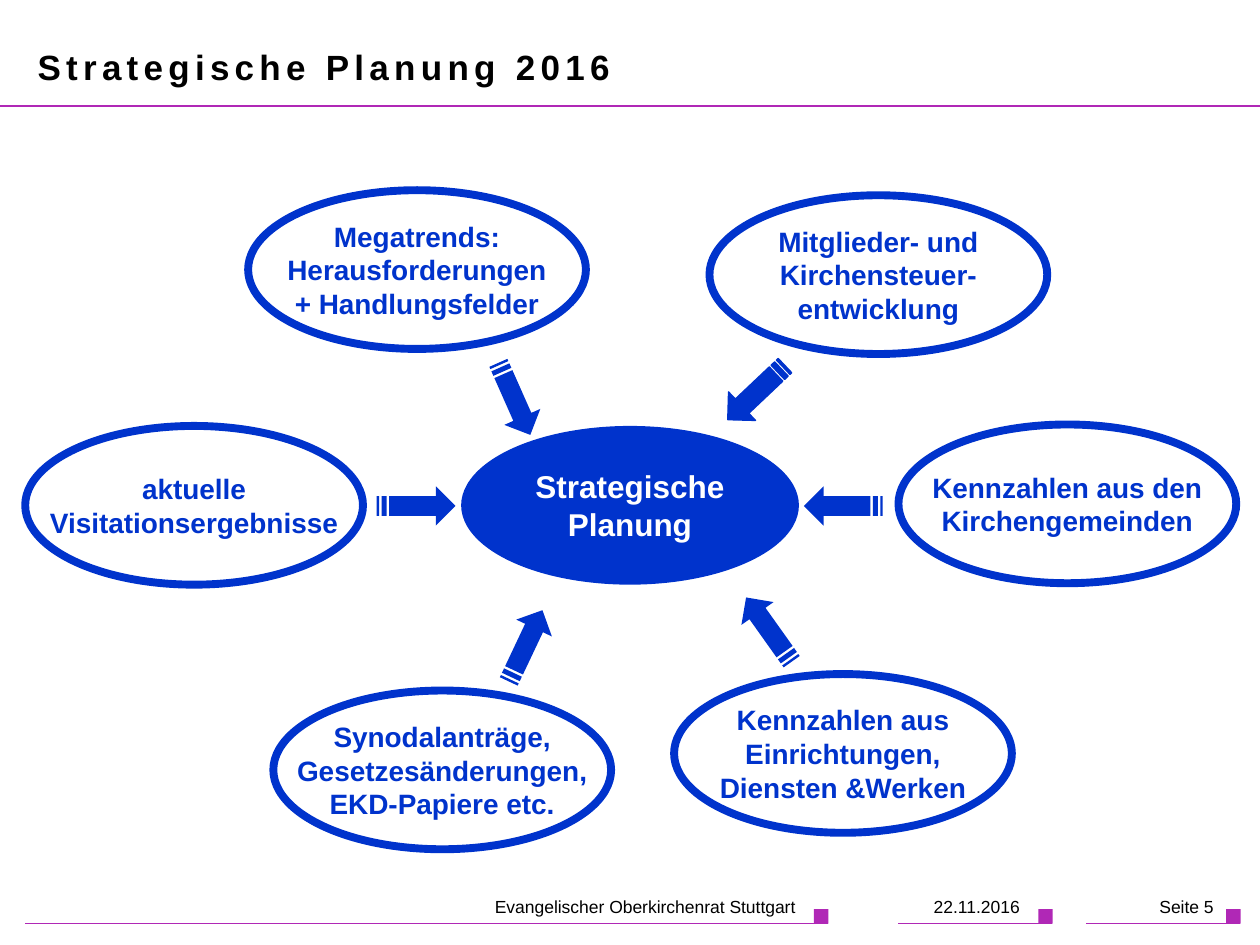
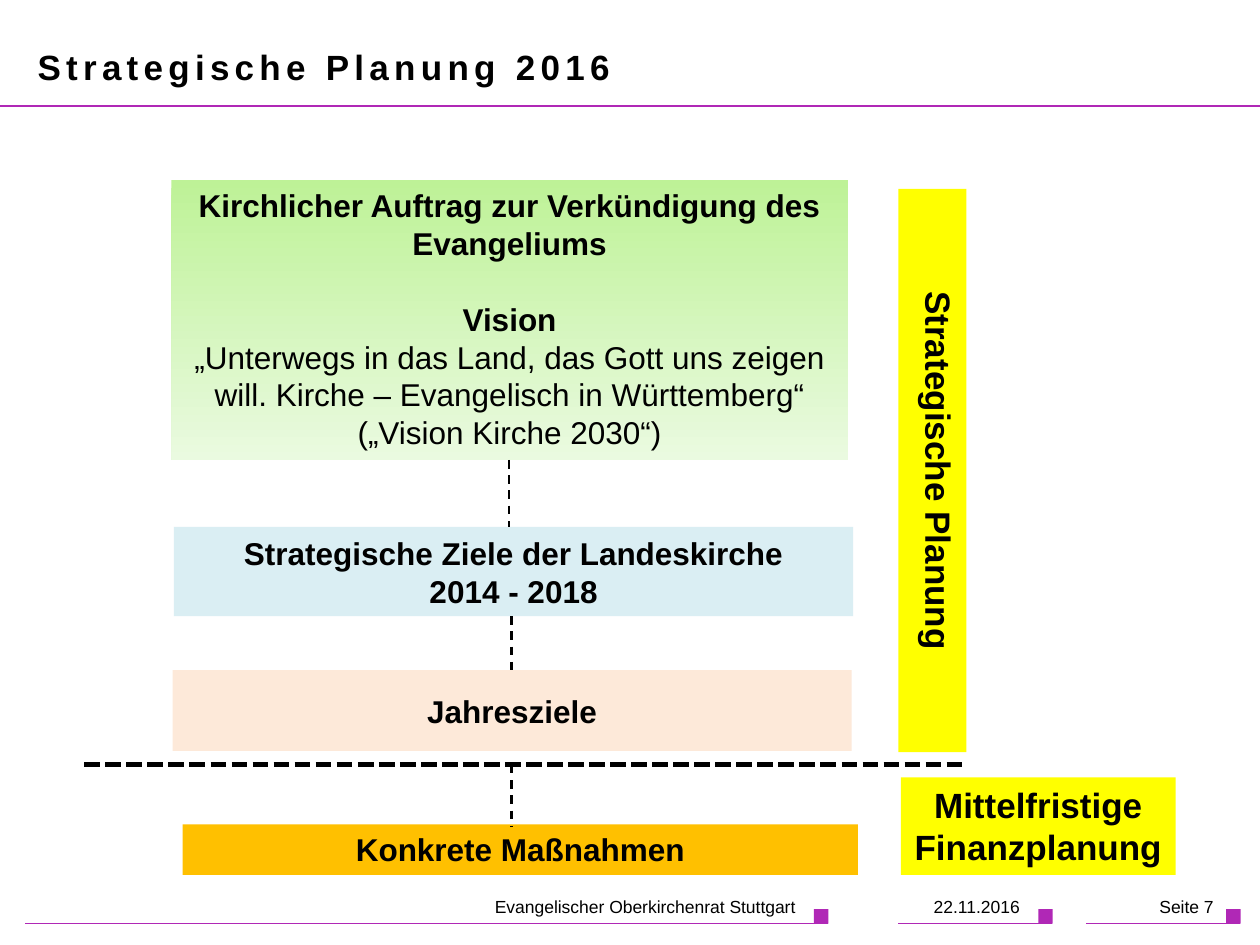
from dataclasses import dataclass

from lxml import etree
from pptx import Presentation
from pptx.dml.color import RGBColor
from pptx.enum.dml import MSO_LINE
from pptx.enum.shapes import MSO_CONNECTOR, MSO_SHAPE
from pptx.enum.text import MSO_ANCHOR, PP_ALIGN
from pptx.oxml.ns import qn
from pptx.shapes.autoshape import Shape
from pptx.slide import Slide
from pptx.util import Pt

LEFT, CENTER, RIGHT = PP_ALIGN.LEFT, PP_ALIGN.CENTER, PP_ALIGN.RIGHT
TOP, MIDDLE = MSO_ANCHOR.TOP, MSO_ANCHOR.MIDDLE
RECTANGLE, OVAL = MSO_SHAPE.RECTANGLE, MSO_SHAPE.OVAL
STRAIGHT = MSO_CONNECTOR.STRAIGHT
DASH, SHORT_DASH = MSO_LINE.DASH, MSO_LINE.SQUARE_DOT


@dataclass(frozen=True)
class Theme:
    """Colours, font and type sizes of the deck."""

    font: str = "Arial"
    black: str = "000000"
    white: str = "FFFFFF"
    purple: str = "B028B6"
    blue: str = "0033CC"
    green_top: str = "BEF297"
    green_bottom: str = "EAFAE0"
    pale_blue: str = "DAEEF3"
    peach: str = "FDE9D9"
    orange: str = "FFC000"
    yellow: str = "FFFF00"
    title_size: float = 20
    body_size: float = 18
    bubble_size: float = 16
    footer_size: float = 10


@dataclass(frozen=True)
class Area:
    """A rectangle measured in points."""

    left: float
    top: float
    width: float
    height: float

    def lengths(self) -> tuple[Pt, Pt, Pt, Pt]:
        """Return the rectangle as lengths."""
        return Pt(self.left), Pt(self.top), Pt(self.width), Pt(self.height)


@dataclass(frozen=True)
class FooterCell:
    """An underlined footer field with a square at its right end."""

    left: float
    right: float
    text_left: float
    text_right: float


@dataclass(frozen=True)
class Bubble:
    """An outlined ellipse naming one source of the planning."""

    left: float
    top: float
    text: str


@dataclass(frozen=True)
class StripedArrow:
    """An arrow turned clockwise from pointing right."""

    left: float
    top: float
    angle: float
    outline: float = 0


@dataclass(frozen=True)
class Panel:
    """A filled rectangle with bold text."""

    area: Area
    text: str
    fill: str
    size: float
    anchor: MSO_ANCHOR = TOP
    vertical: bool = False


@dataclass(frozen=True)
class Rule:
    """A straight line between two points."""

    x1: float
    y1: float
    x2: float
    y2: float
    weight: float
    color: str
    dash: MSO_LINE | None = None


THEME = Theme()
SLIDE_WIDTH, SLIDE_HEIGHT = 720, 540
TITLE = "Strategische Planung 2016"
TITLE_AREA = Area(14.4, 15.1, 589.7, 45.4)
HEADER_Y = 60.5
FOOTER_Y = 527.8
FOOTER_TEXT_TOP = 508.3
MARKER = 8.3
FOOTER_CELLS = (
    FooterCell(14.4, 473, 19.4, 461.5),
    FooterCell(513.4, 601.2, 473, 589.7),
    FooterCell(620.6, 708.5, 612.7, 700.6),
)
BUBBLE_WIDTH, BUBBLE_HEIGHT = 193, 90.7
HUB = Bubble(263.5, 243.4, "Strategische\nPlanung")
BUBBLES = (
    Bubble(156.2, 394.6, "Synodalanträge,\nGesetzesänderungen,\nEKD-Papiere etc."),
    Bubble(141.8, 108.7, "Megatrends:\nHerausforderungen\n+ Handlungsfelder"),
    Bubble(405.4, 111.6, "Mitglieder- und\nKirchensteuer-\nentwicklung"),
    Bubble(513.4, 242.6, "Kennzahlen aus den\nKirchengemeinden"),
    Bubble(14.4, 243.4, "aktuelle\nVisitationsergebnisse"),
    Bubble(385.2, 385.2, "Kennzahlen aus\nEinrichtungen,\nDiensten &Werken"),
)
ARROW_UNIT = 45 / 32
ARROW_PARTS = (
    ((24, 0), (24, 4), (5, 4), (5, 12), (24, 12), (24, 16), (32, 8)),
    ((2, 4), (4, 4), (4, 12), (2, 12)),
    ((0, 4), (1, 4), (1, 12), (0, 12)),
)
ARROWS = (
    StripedArrow(271.4, 216.7, 66.1),
    StripedArrow(459.4, 277.9, 180),
    StripedArrow(409.7, 213.1, 136.6, 0.75),
    StripedArrow(277.9, 357.8, 295.3),
    StripedArrow(215.3, 277.9, 0),
    StripedArrow(416.9, 348.5, 234.6),
)
VISION_AREA = Area(97.9, 103, 386.6, 159.8)
VISION_HEADING = "Kirchlicher Auftrag zur Verkündigung des Evangeliums\nVision"
VISION_QUOTE = (
    "„Unterwegs in das Land, das Gott uns zeigen will. "
    "Kirche – Evangelisch in Württemberg“ („Vision Kirche 2030“)"
)
VISION_GAP = 21.6
PANELS = (
    Panel(Area(99.4, 301, 388.1, 51.1), "Strategische Ziele der Landeskirche\n2014 - 2018",
          THEME.pale_blue, THEME.body_size, MIDDLE),
    Panel(Area(98.6, 383, 388.1, 46.1), "Jahresziele", THEME.peach, THEME.body_size, MIDDLE),
    Panel(Area(513.4, 108, 38.9, 321.8), "Strategische Planung",
          THEME.yellow, THEME.title_size, vertical=True),
    Panel(Area(104.4, 471, 385.9, 29), "Konkrete Maßnahmen", THEME.orange, THEME.body_size),
    Panel(Area(514.8, 444.2, 157, 55.8), "Mittelfristige Finanzplanung",
          THEME.yellow, THEME.title_size),
)
PLAN_RULES = (
    Rule(290.9, 262.8, 290.9, 301, 1.25, THEME.black, DASH),
    Rule(292.3, 352.1, 292.3, 383, 1.25, THEME.black, DASH),
    Rule(48.2, 437, 551.5, 437, 3, THEME.black, SHORT_DASH),
    Rule(292.3, 437, 292.3, 472.3, 1.25, THEME.black, DASH),
)


def write(box: Shape, text: str, size: float, color: str, bold: bool = True,
          align: PP_ALIGN = CENTER, anchor: MSO_ANCHOR = TOP, wrap: bool = True) -> None:
    """Fill a shape with evenly styled paragraphs."""
    frame = box.text_frame
    frame.text = text
    frame.word_wrap = wrap
    frame.vertical_anchor = anchor
    for para in frame.paragraphs:
        para.alignment = align
        para.font.name = THEME.font
        para.font.size = Pt(size)
        para.font.bold = bold
        para.font.color.rgb = RGBColor.from_string(color)


def paint(shape: Shape, fill: str, line: str = "", weight: float = 0) -> None:
    """Give a shape a flat fill and, with a weight, an outline."""
    shape.shadow.inherit = False
    shape.fill.solid()
    shape.fill.fore_color.rgb = RGBColor.from_string(fill)
    if weight:
        shape.line.color.rgb = RGBColor.from_string(line)
        shape.line.width = Pt(weight)
    else:
        shape.line.fill.background()


def draw_rule(page: Slide, rule: Rule) -> None:
    """Draw a straight line without a shadow."""
    connector = page.shapes.add_connector(
        STRAIGHT, Pt(rule.x1), Pt(rule.y1), Pt(rule.x2), Pt(rule.y2))
    connector.line.color.rgb = RGBColor.from_string(rule.color)
    connector.line.width = Pt(rule.weight)
    if rule.dash is not None:
        connector.line.dash_style = rule.dash
    etree.SubElement(connector._element.spPr, qn("a:effectLst"))


def draw_footer_cell(page: Slide, cell: FooterCell, text: str) -> None:
    """Draw one footer field with its underline and square."""
    draw_rule(page, Rule(cell.left, FOOTER_Y, cell.right, FOOTER_Y, 0.75, THEME.purple))
    area = Area(cell.right - MARKER + 0.4, FOOTER_Y - MARKER, MARKER, MARKER)
    paint(page.shapes.add_shape(RECTANGLE, *area.lengths()), THEME.purple)
    area = Area(cell.text_left, FOOTER_TEXT_TOP, cell.text_right - cell.text_left, 22.3)
    write(page.shapes.add_textbox(*area.lengths()), text, THEME.footer_size,
          THEME.black, bold=False, align=RIGHT)


def add_page(deck: Presentation, number: int) -> Slide:
    """Add a slide with the shared title, header line and footer."""
    page = deck.slides.add_slide(deck.slide_layouts[6])
    draw_rule(page, Rule(0, HEADER_Y, SLIDE_WIDTH, HEADER_Y, 1, THEME.purple))
    title = page.shapes.add_textbox(*TITLE_AREA.lengths())
    write(title, TITLE, THEME.title_size, THEME.black, align=LEFT, anchor=MIDDLE)
    title.text_frame.paragraphs[0].runs[0].font._element.set("spc", "300")
    texts = ("Evangelischer Oberkirchenrat Stuttgart", "22.11.2016", f"Seite {number}")
    for cell, text in zip(FOOTER_CELLS, texts):
        draw_footer_cell(page, cell, text)
    return page


def draw_bubble(page: Slide, bubble: Bubble, fill: str, color: str,
                size: float, weight: float = 0) -> None:
    """Draw an ellipse with centred text."""
    area = Area(bubble.left, bubble.top, BUBBLE_WIDTH, BUBBLE_HEIGHT)
    oval = page.shapes.add_shape(OVAL, *area.lengths())
    paint(oval, fill, THEME.blue, weight)
    write(oval, bubble.text, size, color, anchor=MIDDLE, wrap=False)


def draw_arrow(page: Slide, arrow: StripedArrow) -> None:
    """Draw an arrow with two stripes at its tail."""
    builder = page.shapes.build_freeform(*ARROW_PARTS[0][0], scale=Pt(1) * ARROW_UNIT)
    for part in ARROW_PARTS:
        builder.move_to(*part[0])
        builder.add_line_segments(part[1:], close=True)
    shape = builder.convert_to_shape(Pt(arrow.left), Pt(arrow.top))
    shape.rotation = arrow.angle
    paint(shape, THEME.blue, THEME.blue, arrow.outline)


def draw_panel(page: Slide, panel: Panel) -> None:
    """Draw a filled rectangle with its text."""
    box = page.shapes.add_shape(RECTANGLE, *panel.area.lengths())
    paint(box, panel.fill)
    write(box, panel.text, panel.size, THEME.black, anchor=panel.anchor)
    if panel.vertical:
        box.text_frame._txBody.bodyPr.set("vert", "vert")


def draw_vision(page: Slide) -> None:
    """Draw the gradient box with mission and vision."""
    box = page.shapes.add_shape(RECTANGLE, *VISION_AREA.lengths())
    paint(box, THEME.green_top)
    box.fill.gradient()
    box.fill.gradient_angle = 270
    for stop, color in zip(box.fill.gradient_stops, (THEME.green_top, THEME.green_bottom)):
        stop.color.rgb = RGBColor.from_string(color)
    write(box, f"{VISION_HEADING}\n{VISION_QUOTE}", THEME.body_size, THEME.black)
    mission, vision, quote = box.text_frame.paragraphs
    vision.space_before = Pt(VISION_GAP)
    quote.font.bold = False


def build_sources(deck: Presentation) -> None:
    """Build the slide with the sources around the planning hub."""
    page = add_page(deck, 5)
    draw_bubble(page, HUB, THEME.blue, THEME.white, THEME.body_size)
    for bubble in BUBBLES:
        draw_bubble(page, bubble, THEME.white, THEME.blue, THEME.bubble_size, 4.5)
    for arrow in ARROWS:
        draw_arrow(page, arrow)


def build_levels(deck: Presentation) -> None:
    """Build the slide with the planning levels."""
    page = add_page(deck, 7)
    draw_vision(page)
    for panel in PANELS:
        draw_panel(page, panel)
    for rule in PLAN_RULES:
        draw_rule(page, rule)


def main() -> None:
    """Build and save the deck."""
    deck = Presentation()
    deck.slide_width, deck.slide_height = Pt(SLIDE_WIDTH), Pt(SLIDE_HEIGHT)
    build_sources(deck)
    build_levels(deck)
    deck.save("out.pptx")


if __name__ == "__main__":
    main()
